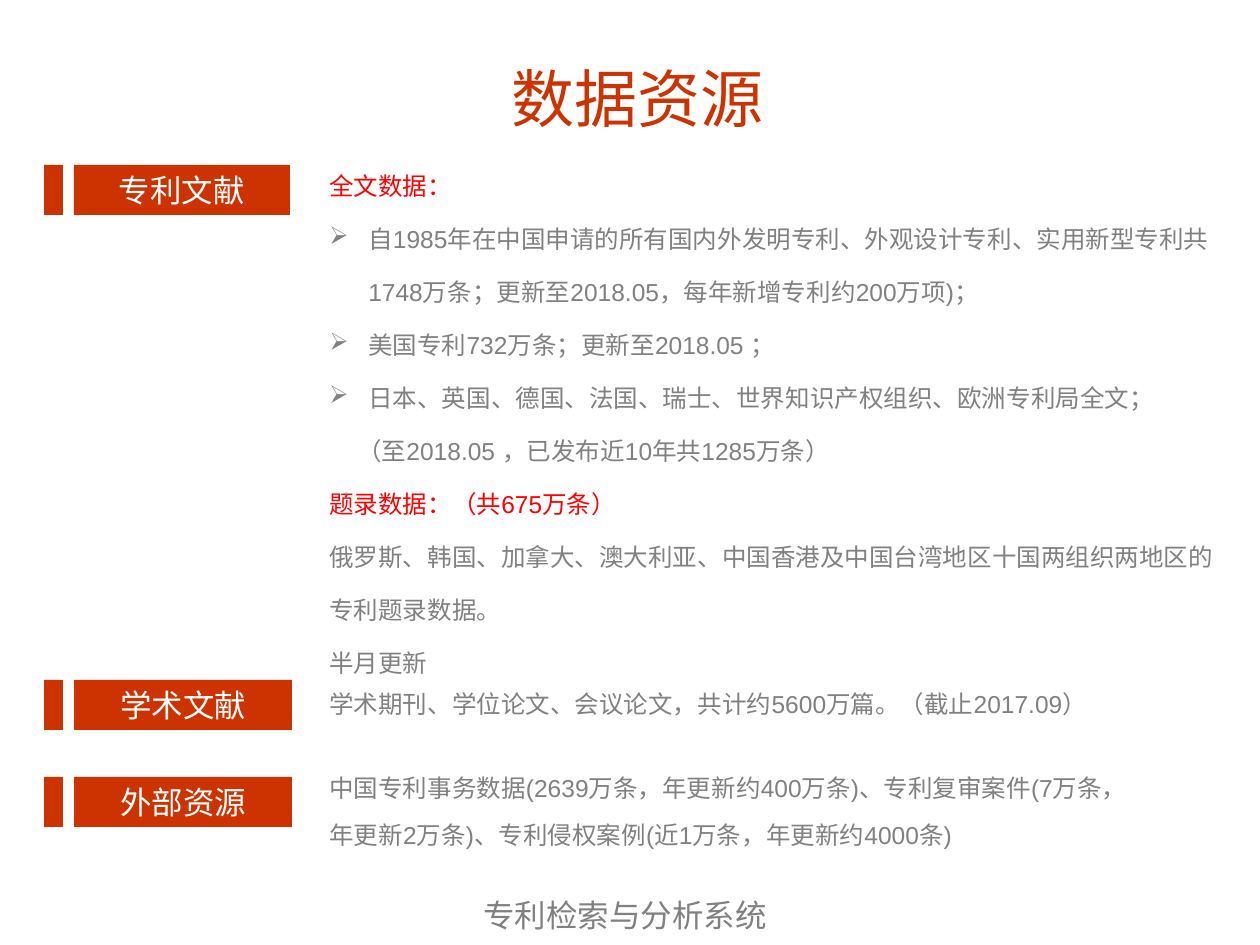
from pptx import Presentation
from pptx.dml.color import RGBColor
from pptx.enum.shapes import MSO_SHAPE
from pptx.enum.text import MSO_ANCHOR, PP_ALIGN
from pptx.oxml import parse_xml
from pptx.oxml.ns import nsdecls
from pptx.util import Emu, Pt

PX = 914400 / 126
THEME = {
    "accent": RGBColor(0xCC, 0x33, 0x00),
    "red": RGBColor(0xFF, 0x00, 0x00),
    "grey": RGBColor(0x80, 0x80, 0x80),
    "white": RGBColor(0xFF, 0xFF, 0xFF),
    "title": 36, "label": 18, "body": 14,
    "font": "Arial", "title_font": "Noto Sans CJK SC",
}


def px(n):
    return Emu(round(n * PX))


def write(sp, lines, size, anchor=MSO_ANCHOR.MIDDLE, font="font", **fmt):
    """Fill sp with (text, colour, left margin, bullet) lines; fmt sets paragraph values."""
    tf = sp.text_frame
    tf.word_wrap = True
    tf.vertical_anchor = anchor
    for i, (text, colour, margin, bullet) in enumerate(lines):
        p = tf.add_paragraph() if i else tf.paragraphs[0]
        for key, value in fmt.items():
            setattr(p, key, value)
        r = p.add_run()
        r.text = text
        values = {"name": THEME[font], "size": Pt(THEME[size])}
        for key, value in values.items():
            setattr(r.font, key, value)
        r.font.color.rgb = THEME[colour]
        if margin:
            pPr = p._p.get_or_add_pPr()
            pPr.set("marL", str(px(margin)))
            if bullet:
                pPr.set("indent", str(-px(margin)))
                pPr.append(parse_xml(f'<a:buChar {nsdecls("a")} char="{bullet}"/>'))
    return tf


prs = Presentation()
prs.slide_width, prs.slide_height = px(1260), px(945)
s = prs.slides.add_slide(prs.slide_layouts[6])

# Title
sp = s.shapes.add_textbox(px(95), px(6), px(1086), px(183))
write(sp, [("数据资源", "accent", 0, None)], "title", font="title_font",
      alignment=PP_ALIGN.CENTER)

# Section labels, each with a narrow marker at its left
for label, top, width in [("专利文献", 165, 216), ("学术文献", 680, 218), ("外部资源", 777, 218)]:
    for left, w, text in [(44, 19, None), (74, width, label)]:
        sp = s.shapes.add_shape(MSO_SHAPE.RECTANGLE, px(left), px(top), px(w), px(50))
        sp.shadow.inherit = False
        sp.fill.solid()
        sp.fill.fore_color.rgb = THEME["accent"]
        sp.line.fill.background()
        if text:
            write(sp, [(text, "white", 0, None)], "label", MSO_ANCHOR.TOP,
                  alignment=PP_ALIGN.CENTER)

# Patent literature
patents = [
    ("全文数据：", "red", 0, None),
    ("自1985年在中国申请的所有国内外发明专利、外观设计专利、实用新型专利共1748万条；"
     "更新至2018.05，每年新增专利约200万项)；", "grey", 39, "➢"),
    ("美国专利732万条；更新至2018.05 ；", "grey", 39, "➢"),
    ("日本、英国、德国、法国、瑞士、世界知识产权组织、欧洲专利局全文；", "grey", 39, "➢"),
    ("（至2018.05 ，已发布近10年共1285万条）", "grey", 28, None),
    ("题录数据：（共675万条）", "red", 0, None),
    ("俄罗斯、韩国、加拿大、澳大利亚、中国香港及中国台湾地区十国两组织两地区的专利题录数据。",
     "grey", 0, None),
    ("半月更新", "grey", 0, None),
]
sp = s.shapes.add_textbox(px(317), px(214), px(921), px(448))
tf = write(sp, patents, "body", line_spacing=1.8)
tf.margin_bottom = px(57)

# Academic literature and external resources
for text, top, width, height in [
    ("学术期刊、学位论文、会议论文，共计约5600万篇。（截止2017.09）", 670, 880, 50),
    ("中国专利事务数据(2639万条，年更新约400万条)、专利复审案件(7万条，年更新2万条)、"
     "专利侵权案例(近1万条，年更新约4000条)", 751, 839, 102),
]:
    sp = s.shapes.add_textbox(px(317), px(top), px(width), px(height))
    write(sp, [(text, "grey", 0, None)], "body", line_spacing=1.6)

# Footer
sp = s.shapes.add_textbox(px(471), px(890), px(333), px(50))
write(sp, [("专利检索与分析系统", "grey", 0, None)], "label", MSO_ANCHOR.TOP)

prs.save("out.pptx")
